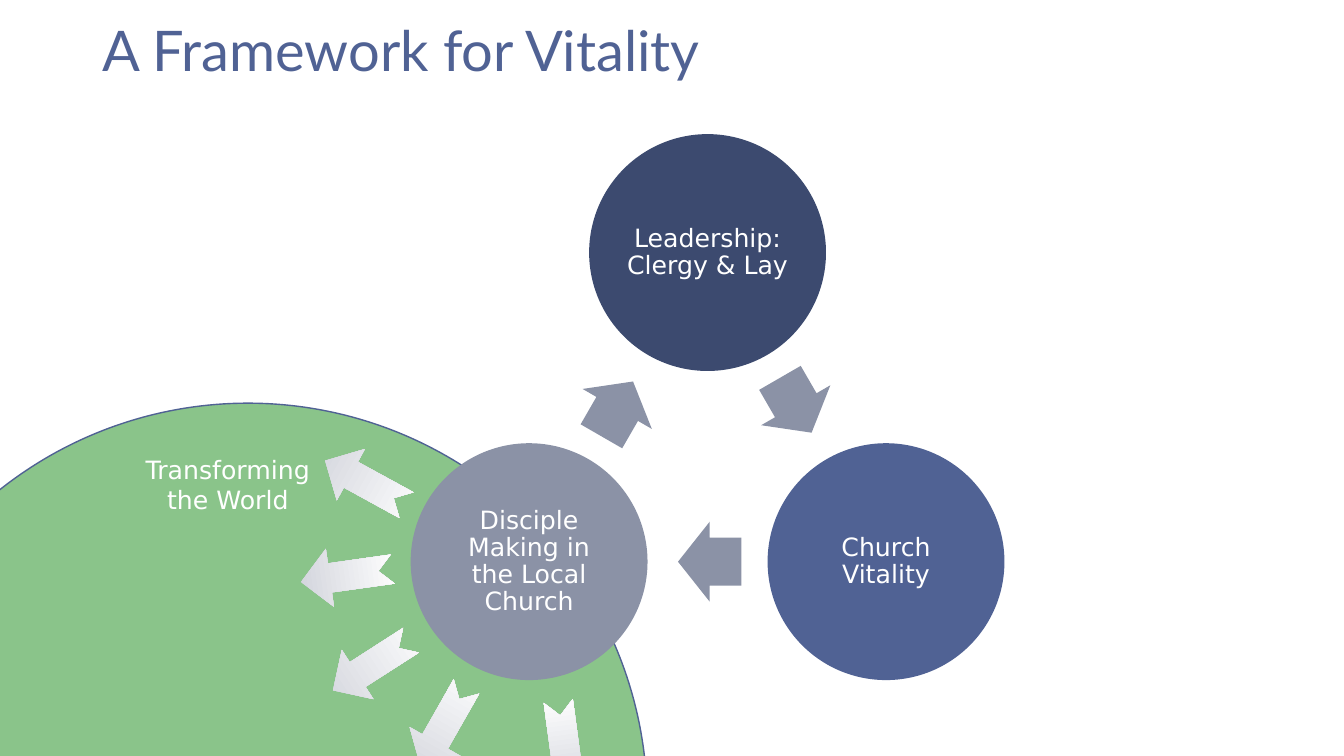
from dataclasses import dataclass
from math import cos, radians, sin

from lxml import etree
from pptx import Presentation
from pptx.dml.color import RGBColor
from pptx.enum.shapes import MSO_SHAPE
from pptx.enum.text import MSO_ANCHOR, PP_ALIGN
from pptx.oxml.ns import qn
from pptx.shapes.autoshape import Shape
from pptx.slide import Slide
from pptx.text.text import TextFrame
from pptx.util import Pt

OVAL = MSO_SHAPE.OVAL
ARROW = MSO_SHAPE.RIGHT_ARROW
NOTCHED = MSO_SHAPE.NOTCHED_RIGHT_ARROW
MIDDLE = MSO_ANCHOR.MIDDLE
TOP = MSO_ANCHOR.TOP
LEFT = PP_ALIGN.LEFT
CENTER = PP_ALIGN.CENTER

WHITE = RGBColor(0xFF, 0xFF, 0xFF)
NAVY = RGBColor(0x3C, 0x4A, 0x6F)
BLUE = RGBColor(0x50, 0x62, 0x94)
GRAY = RGBColor(0x8B, 0x92, 0xA6)
PALE = RGBColor(0xD1, 0xD3, 0xDB)
GREEN = RGBColor(0x00, 0x80, 0x00)

RING_X, RING_Y, RADIUS = 505.4, 327.6, 147.2
DISC = 169.2
LAG = 1.5


@dataclass
class Stage:
    text: str
    color: RGBColor


@dataclass
class Ray:
    left: float
    top: float
    turn: float


STAGES = [
    Stage("Leadership: Clergy & Lay", NAVY),
    Stage("Church Vitality", BLUE),
    Stage("Disciple Making in the Local Church", GRAY),
]
RAYS = [
    Ray(283.7, 498.2, 119.6),
    Ray(232.6, 454.3, 147.3),
    Ray(214.6, 390.2, 172),
    Ray(228.2, 324, 208.7),
    Ray(370.1, 512.6, 82.3),
]


def write(frame: TextFrame, text: str, *, font: str = "DejaVu Sans",
          size: float = 18, color: RGBColor = WHITE,
          align: PP_ALIGN = CENTER, anchor: MSO_ANCHOR = MIDDLE,
          pitch: float = 0.9, wrap: bool = True) -> None:
    frame.word_wrap = wrap
    frame.vertical_anchor = anchor
    frame.text = text
    for para in frame.paragraphs:
        para.alignment = align
        para.line_spacing = pitch
        para.font.name = font
        para.font.size = Pt(size)
        para.font.color.rgb = color


def draw(slide: Slide, kind: MSO_SHAPE, left: float, top: float,
         width: float, height: float, color: RGBColor,
         turn: float = 0) -> Shape:
    shape = slide.shapes.add_shape(
        kind, Pt(left), Pt(top), Pt(width), Pt(height))
    shape.shadow.inherit = False
    shape.fill.solid()
    shape.fill.fore_color.rgb = color
    shape.line.fill.background()
    shape.rotation = turn
    return shape


def draw_world(slide: Slide) -> None:
    world = draw(slide, OVAL, -108, 288, 570.24, 570.24, GREEN)
    tint = world.fill._xPr.find(qn("a:solidFill"))[0]
    etree.SubElement(tint, qn("a:alpha"), val="46000")
    world.line.color.rgb = BLUE
    world.line.width = Pt(1)


def draw_stage(slide: Slide, stage: Stage, angle: float) -> None:
    left = RING_X + RADIUS * cos(radians(angle)) - DISC / 2
    top = RING_Y + RADIUS * sin(radians(angle)) - DISC / 2
    disc = draw(slide, OVAL, left, top, DISC, DISC, stage.color)
    frame = disc.text_frame
    frame.margin_left = frame.margin_right = Pt(2)
    frame.margin_top = frame.margin_bottom = Pt(2)
    write(frame, stage.text)


def draw_link(slide: Slide, angle: float) -> None:
    width, height = 45.2, 57.1
    turn = angle + 90
    mid_x = RING_X + RADIUS / 2 * cos(radians(angle)) - LAG * cos(radians(turn))
    mid_y = RING_Y + RADIUS / 2 * sin(radians(angle)) - LAG * sin(radians(turn))
    link = draw(slide, ARROW, mid_x - width / 2, mid_y - height / 2,
                width, height, GRAY, turn)
    link.adjustments[0] = 0.6
    link.adjustments[1] = 0.5


def draw_ray(slide: Slide, ray: Ray) -> None:
    shape = draw(slide, NOTCHED, ray.left, ray.top, 66.2, 41.8, PALE, ray.turn)
    shape.fill.gradient()
    shape.fill.gradient_angle = 180
    for stop, color, place in zip(shape.fill.gradient_stops, (PALE, WHITE), (0, 1)):
        stop.color.rgb = color
        stop.position = place


def add_label(slide: Slide, left: float, top: float,
              width: float, height: float) -> TextFrame:
    box = slide.shapes.add_textbox(Pt(left), Pt(top), Pt(width), Pt(height))
    return box.text_frame


def main() -> None:
    deck = Presentation()
    deck.slide_width, deck.slide_height = Pt(960), Pt(540)
    slide = deck.slides.add_slide(deck.slide_layouts[6])
    draw_world(slide)
    write(add_label(slide, 66, 5, 828, 67), "A Framework for Vitality",
          font="Lato", size=40, color=BLUE, align=LEFT)
    for step, stage in enumerate(STAGES):
        angle = 120 * step - 90
        draw_stage(slide, stage, angle)
        draw_link(slide, angle + 60)
    for ray in RAYS:
        draw_ray(slide, ray)
    write(add_label(slide, 95.8, 321.1, 133.9, 51.1),
          "Transforming\nthe World", anchor=TOP, pitch=1.0, wrap=False)
    deck.save("out.pptx")


if __name__ == "__main__":
    main()
